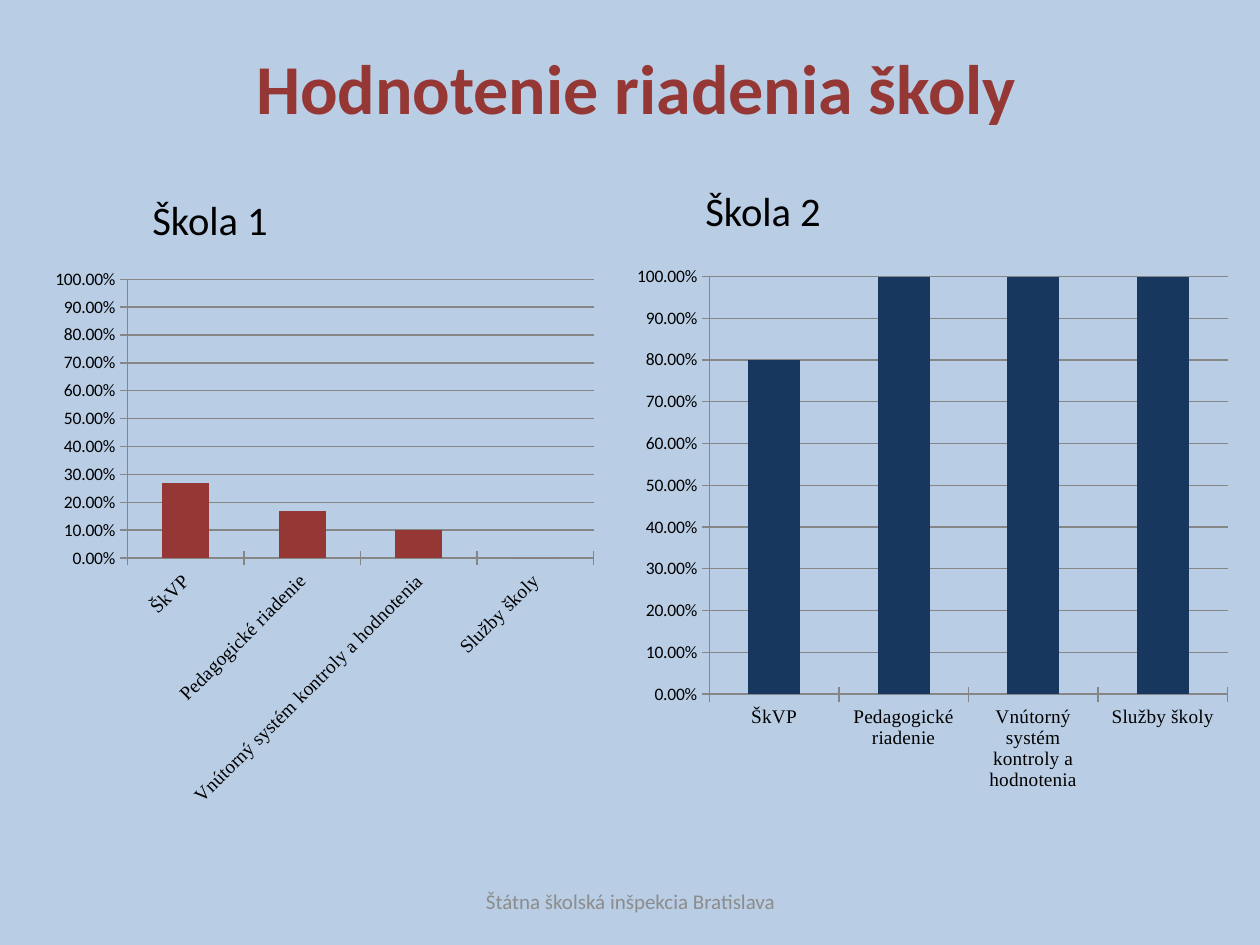
"""Build the slide that compares how two schools are managed."""
from dataclasses import dataclass
from typing import NamedTuple

import pptx
import pptx.chart.data
import pptx.dml.color
import pptx.enum.chart
import pptx.enum.text
import pptx.util

WIDE = pptx.util.Inches(10)
HIGH = pptx.util.Inches(7.5)
RED, NAVY, BLACK, GREY = "953735", "17375E", "000000", "868686"
SANS, SERIF = "Calibri", "Times New Roman"
TOPICS = (
    "ŠkVP",
    "Pedagogické riadenie",
    "Vnútorný systém kontroly a hodnotenia",
    "Služby školy",
)


class Box(NamedTuple):
    """Place in percent of the slide's width and height."""
    left: float
    top: float
    width: float
    height: float

    def place(self) -> tuple:
        """Give the place in slide units."""
        return (
            int(WIDE * self.left / 100),
            int(HIGH * self.top / 100),
            int(WIDE * self.width / 100),
            int(HIGH * self.height / 100),
        )


@dataclass
class Label:
    """One line of text."""
    text: str
    box: Box
    size: float
    color: str = BLACK
    bold: bool = False
    middle: bool = False
    inset: tuple = (0.1, 0.05)


@dataclass
class Graph:
    """One column chart."""
    box: Box
    values: tuple
    color: str
    turn: int


LABELS = (
    Label("Hodnotenie riadenia školy", Box(7.4, 5.07, 86.2, 8.13), 40, RED,
          bold=True, middle=True, inset=(0.07, 0.04)),
    Label("Škola 1", Box(10.3, 20, 14.7, 5.47), 23.2, inset=(0.18, 0.05)),
    Label("Škola 2", Box(55, 19.07, 13.1, 6.53), 23.2),
    Label("Štátna školská inšpekcia Bratislava", Box(34.2, 92.67, 31.7, 5.33),
          12, "8C8C8C", middle=True),
)
GRAPHS = (
    Graph(Box(3.5, 27.33, 44.5, 59.2), (0.27, 0.17, 0.1, 0), RED, -45),
    Graph(Box(49.6, 27.07, 48.8, 57.73), (0.8, 1, 1, 1), NAVY, 0),
)


def paint(fill, color: str) -> None:
    """Fill with a solid colour."""
    fill.solid()
    fill.fore_color.rgb = pptx.dml.color.RGBColor.from_string(color)


def style(font, size: float, name: str = SANS, color: str = BLACK) -> None:
    """Set the face, size and colour of a font."""
    font.name = name
    font.size = pptx.util.Pt(size)
    paint(font.fill, color)


def write(slide, label: Label) -> None:
    """Add a text box."""
    frame = slide.shapes.add_textbox(*label.box.place()).text_frame
    frame.word_wrap = True
    side, edge = map(pptx.util.Inches, label.inset)
    frame.margin_left = side
    frame.margin_right = pptx.util.Inches(min(label.inset[0], 0.1))
    frame.margin_top = frame.margin_bottom = edge
    line = frame.paragraphs[0]
    if label.middle:
        frame.vertical_anchor = pptx.enum.text.MSO_ANCHOR.MIDDLE
        line.alignment = pptx.enum.text.PP_ALIGN.CENTER
    run = line.add_run()
    run.text = label.text
    style(run.font, label.size, color=label.color)
    run.font.bold = label.bold


def plot(slide, graph: Graph) -> None:
    """Add a column chart."""
    data = pptx.chart.data.CategoryChartData(number_format="0.00%")
    data.categories = TOPICS
    data.add_series("Series 1", graph.values)
    kind = pptx.enum.chart.XL_CHART_TYPE.COLUMN_CLUSTERED
    chart = slide.shapes.add_chart(kind, *graph.box.place(), data).chart
    chart.has_legend = chart.has_title = False
    style(chart.font, 10)

    bars = chart.plots[0]
    bars.gap_width = 150
    bars.vary_by_categories = False
    paint(bars.series[0].format.fill, graph.color)

    names, scale = chart.category_axis, chart.value_axis
    for axis in (names, scale):
        axis.major_tick_mark = pptx.enum.chart.XL_TICK_MARK.CROSS
        paint(axis.format.line.fill, GREY)
    style(names.tick_labels.font, 11, SERIF)
    body = names._element.txPr.bodyPr
    body.set("rot", str(graph.turn * 60000))
    body.set("vert", "horz")

    scale.minimum_scale, scale.maximum_scale = 0, 1
    scale.major_unit = 0.1
    scale.has_major_gridlines = True
    paint(scale.major_gridlines.format.line.fill, GREY)
    style(scale.tick_labels.font, 10)
    scale.tick_labels.number_format = "0.00%"
    scale.tick_labels.number_format_is_linked = False


def main() -> None:
    """Build and save the slide."""
    deck = pptx.Presentation()
    deck.slide_width, deck.slide_height = WIDE, HIGH
    slide = deck.slides.add_slide(deck.slide_layouts[6])
    paint(slide.background.fill, "B9CDE5")
    for label in LABELS:
        write(slide, label)
    for graph in GRAPHS:
        plot(slide, graph)
    deck.save("out.pptx")


if __name__ == "__main__":
    main()
